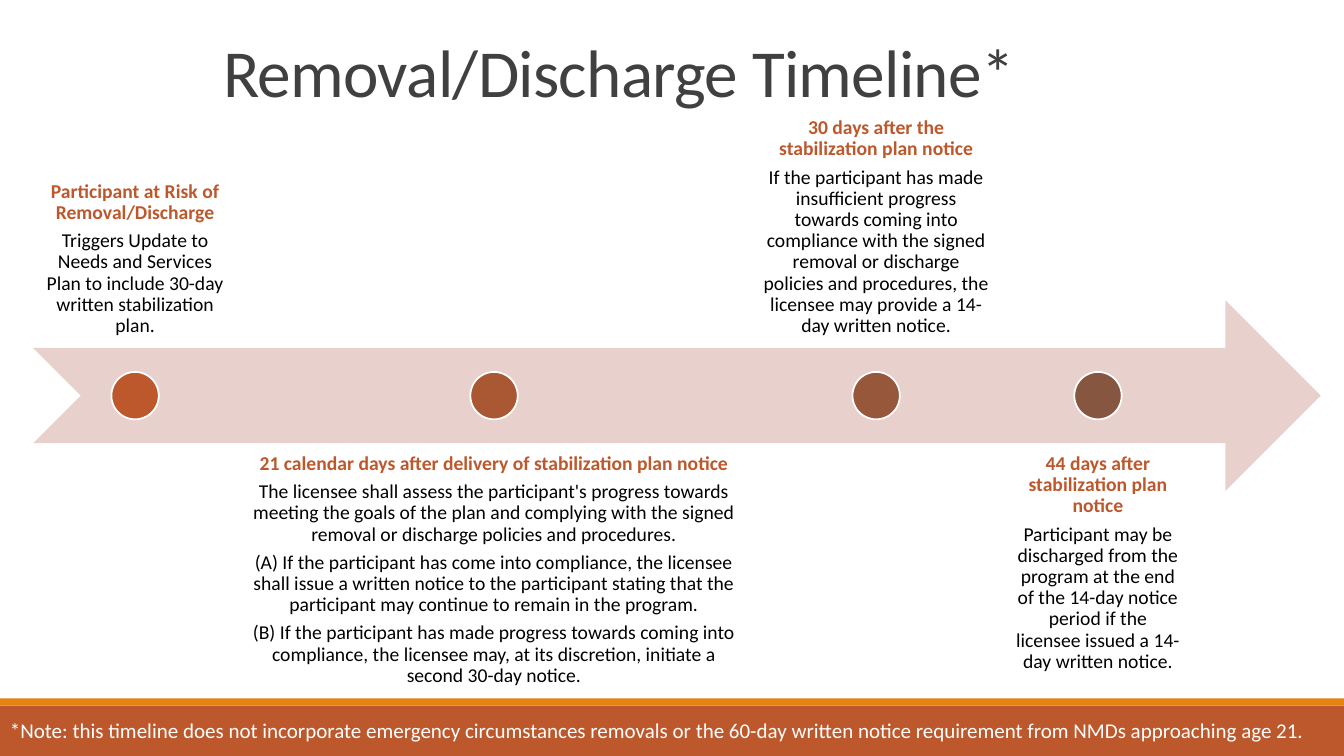
from dataclasses import dataclass

from pptx import Presentation
from pptx.dml.color import RGBColor
from pptx.enum import shapes, text
from pptx.util import Inches, Pt


@dataclass(frozen=True)
class Theme:
    font: str = "Calibri"
    rust: str = "BD582C"
    orange: str = "E48312"
    arrow: str = "E8D1CD"
    title: str = "404040"
    body: str = "000000"
    white: str = "FFFFFF"
    title_size: float = 48
    label_size: float = 14
    note_size: float = 15


@dataclass(frozen=True)
class Milestone:
    width: float
    dot_color: str
    heading: str
    details: tuple[str, ...]


THEME = Theme()
SLIDE_W, SLIDE_H = 13.33, 7.5
ARROW_LEFT, ARROW_TOP, ARROW_W, ARROW_H = 0.33, 2.98, 12.77, 1.89
LABEL_TOPS = (1.56, 4.39)  # labels alternate above and below the arrow
LABEL_H, LABEL_GAP, LABEL_INSET = 1.89, 0.03, 0.11
DOT = 0.47

MILESTONES = (
    Milestone(2.02, "BD582C", "Participant at Risk of Removal/Discharge", (
        "Triggers Update to Needs and Services Plan to include 30-day "
        "written stabilization plan.",
    )),
    Milestone(5.04, "AA5834", "21 calendar days after delivery of stabilization plan notice", (
        "The licensee shall assess the participant's progress towards meeting the goals "
        "of the plan and complying with the signed removal or discharge policies and procedures.",
        "(A) If the participant has come into compliance, the licensee shall issue a written "
        "notice to the participant stating that the participant may continue to remain in "
        "the program.",
        "(B) If the participant has made progress towards coming into compliance, the licensee "
        "may, at its discretion, initiate a second 30-day notice.",
    )),
    Milestone(2.48, "97573A", "30 days after the stabilization plan notice", (
        "If the participant has made insufficient progress towards coming into compliance with "
        "the signed removal or discharge policies and procedures, the licensee may provide a "
        "14-day written notice.",
    )),
    Milestone(1.86, "865640", "44 days after stabilization plan notice", (
        "Participant may be discharged from the program at the end of the 14-day notice period "
        "if the licensee issued a 14-day written notice.",
    )),
)
NOTE = ("*Note: this timeline does not incorporate emergency circumstances removals or the "
        "60-day written notice requirement from NMDs approaching age 21.")


def box(left: float, top: float, width: float, height: float) -> tuple:
    return Inches(left), Inches(top), Inches(width), Inches(height)


def style_runs(p, size: float, color: str, bold: bool = False) -> None:
    for r in p.runs:
        r.font.name = THEME.font
        r.font.size = Pt(size)
        r.font.bold = bold
        r.font.color.rgb = RGBColor.from_string(color)


def add_filled(slide, kind, place: tuple, fill: str, line: str | None = None):
    sp = slide.shapes.add_shape(kind, *place)
    sp.shadow.inherit = False
    sp.fill.solid()
    sp.fill.fore_color.rgb = RGBColor.from_string(fill)
    if line:
        sp.line.color.rgb = RGBColor.from_string(line)
        sp.line.width = Pt(1.25)
    else:
        sp.line.fill.background()
    return sp


def add_title(slide, wording: str) -> None:
    sp = slide.shapes.title
    sp.left, sp.top, sp.width, sp.height = box(0.64, 0.21, 11, 0.94)
    tf = sp.text_frame
    tf.text = wording
    tf.auto_size = text.MSO_AUTO_SIZE.NONE
    tf.vertical_anchor = text.MSO_ANCHOR.BOTTOM
    p = tf.paragraphs[0]
    p.alignment = text.PP_ALIGN.CENTER
    p.line_spacing = 0.85
    style_runs(p, THEME.title_size, THEME.title)
    p.runs[0].font._element.set("spc", "-50")


def add_label(slide, milestone: Milestone, left: float, above: bool) -> None:
    top = LABEL_TOPS[0 if above else 1]
    tf = slide.shapes.add_textbox(*box(left, top, milestone.width, LABEL_H)).text_frame
    tf.word_wrap = True
    tf.vertical_anchor = text.MSO_ANCHOR.BOTTOM if above else text.MSO_ANCHOR.TOP
    tf.margin_left = tf.margin_right = tf.margin_top = tf.margin_bottom = Inches(LABEL_INSET)
    tf.text = "\n".join((milestone.heading, *milestone.details))
    for i, p in enumerate(tf.paragraphs):
        p.alignment = text.PP_ALIGN.CENTER
        p.line_spacing = 0.9
        p.space_after = Pt(5)
        style_runs(p, THEME.label_size, THEME.body if i else THEME.rust, bold=i == 0)


def add_timeline(slide) -> None:
    add_filled(slide, shapes.MSO_SHAPE.NOTCHED_RIGHT_ARROW,
               box(ARROW_LEFT, ARROW_TOP, ARROW_W, ARROW_H), THEME.arrow)
    left = ARROW_LEFT
    dot_top = ARROW_TOP + (ARROW_H - DOT) / 2
    for i, milestone in enumerate(MILESTONES):
        add_label(slide, milestone, left, above=i % 2 == 0)
        dot_left = left + (milestone.width - DOT) / 2
        add_filled(slide, shapes.MSO_SHAPE.OVAL, box(dot_left, dot_top, DOT, DOT),
                   milestone.dot_color, THEME.white)
        left += milestone.width + LABEL_GAP


def add_footer(slide) -> None:
    rectangle = shapes.MSO_SHAPE.RECTANGLE
    add_filled(slide, rectangle, box(0, 7, SLIDE_W, 0.5), THEME.rust)
    add_filled(slide, rectangle, box(0, 6.93, SLIDE_W, 0.07), THEME.orange)
    tf = slide.shapes.add_textbox(*box(0, 7.07, SLIDE_W, 0.35)).text_frame
    tf.word_wrap = True
    tf.auto_size = text.MSO_AUTO_SIZE.SHAPE_TO_FIT_TEXT
    tf.text = NOTE
    style_runs(tf.paragraphs[0], THEME.note_size, THEME.white)


def main() -> None:
    prs = Presentation()
    prs.slide_width, prs.slide_height = Inches(SLIDE_W), Inches(SLIDE_H)
    slide = prs.slides.add_slide(prs.slide_layouts.get_by_name("Title Only"))
    add_title(slide, "Removal/Discharge Timeline*")
    add_timeline(slide)
    add_footer(slide)
    prs.save("out.pptx")


if __name__ == "__main__":
    main()
